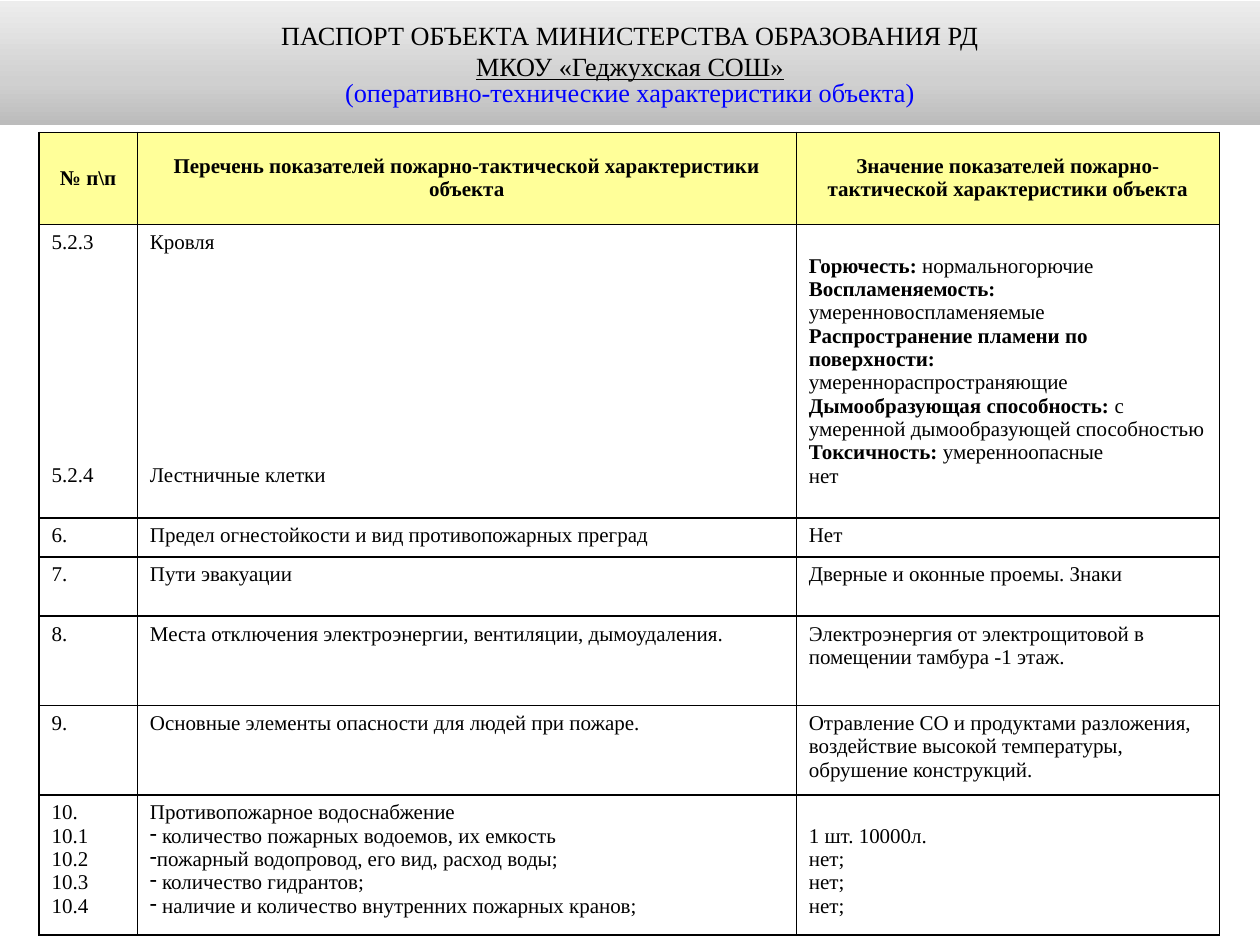
import copy
import lxml.etree
import pptx
import pptx.util
import pptx.dml.color
import pptx.enum.shapes
import pptx.enum.text
import pptx.oxml.ns

HUES = {"ink": "000000", "blue": "0000FF", "head": "FFFF99", "cell": "FFFFFF"}
FADE = [(0, "BCBCBC"), (0.35, "D0D0D0"), (1, "EDEDED")]
FONT = "Times New Roman"
WIDE, HIGH = 10, 7.5
COLS = [0.78, 5.23, 3.36]
ROWS = [0.73, 2.33, 0.31, 0.47, 0.71, 0.71, 1.11]
LINE = 13.33
MID = pptx.enum.text.MSO_ANCHOR.MIDDLE
MARK = "- "

TITLE = [
    "ПАСПОРТ ОБЪЕКТА МИНИСТЕРСТВА ОБРАЗОВАНИЯ РД",
    "МКОУ «Геджухская СОШ»",
    "(оперативно-технические характеристики объекта)",
]
HEAD = [
    "№ п\\п",
    "Перечень показателей пожарно-тактической характеристики объекта",
    "Значение показателей пожарно-тактической характеристики объекта",
]
ROOF = [
    ("Горючесть:", " нормальногорючие"),
    ("Воспламеняемость: ", "умеренновоспламеняемые"),
    ("Распространение пламени по поверхности:", ""),
    ("", "умереннораспространяющие"),
    ("Дымообразующая способность: ", "с умеренной дымообразующей способностью"),
    ("Токсичность:", " умеренноопасные"),
    ("", "нет"),
]
BODY = [
    ["5.2.3\n5.2.4", "Кровля\nЛестничные клетки", ROOF],
    ["6.", "Предел огнестойкости и вид противопожарных преград", "Нет"],
    ["7.", "Пути эвакуации", "Дверные и оконные проемы. Знаки"],
    ["8.", "Места отключения электроэнергии, вентиляции, дымоудаления.",
     "Электроэнергия от электрощитовой в помещении тамбура -1 этаж."],
    ["9.", "Основные элементы опасности для людей при пожаре.",
     "Отравление СО и продуктами разложения, воздействие высокой "
     "температуры, обрушение конструкций."],
    ["10.\n10.1\n10.2\n10.3\n10.4",
     "Противопожарное водоснабжение\n количество пожарных водоемов, их емкость\n"
     "пожарный водопровод, его вид, расход воды;\n количество гидрантов;\n"
     " наличие и количество внутренних пожарных кранов;",
     "1 шт. 10000л.\nнет;\nнет;\nнет;"],
]


def tint(name):
    return pptx.dml.color.RGBColor.from_string(HUES.get(name, name))


def style(run, size, hue="ink", bold=False):
    run.font.name = FONT
    run.font.size = pptx.util.Pt(size)
    run.font.bold = bold
    run.font.color.rgb = tint(hue)


def center(para):
    para.alignment = pptx.enum.text.PP_ALIGN.CENTER


def fade(shape):
    fill = shape.fill
    fill.gradient()
    fill.gradient_angle = 90
    first = shape.element.find(".//" + pptx.oxml.ns.qn("a:gs"))
    first.addnext(copy.deepcopy(first))
    for stop, (place, hue) in zip(fill.gradient_stops, FADE):
        stop.position = place
        stop.color.rgb = tint(hue)


def banner(slide):
    inch = pptx.util.Inches
    shape = slide.shapes.add_shape(
        pptx.enum.shapes.MSO_SHAPE.RECTANGLE, 0, inch(0.01), inch(WIDE), inch(0.98))
    shape.shadow.inherit = False
    shape.line.fill.background()
    fade(shape)
    frame = shape.text_frame
    frame.word_wrap = True
    frame.vertical_anchor = MID
    frame.text = "\n".join(TITLE)
    for para in frame.paragraphs:
        center(para)
        style(para.runs[0], 15)
    name, note = frame.paragraphs[1:]
    name.runs[0].font.underline = True
    note.line_spacing = 0.8
    note.runs[0].font.color.rgb = tint("blue")


def edge(cell):
    props = cell._tc.get_or_add_tcPr()
    qn = pptx.oxml.ns.qn
    for spot, side in enumerate(("a:lnL", "a:lnR", "a:lnT", "a:lnB")):
        line = lxml.etree.Element(qn(side), w=str(pptx.util.Pt(1)))
        fill = lxml.etree.SubElement(line, qn("a:solidFill"))
        lxml.etree.SubElement(fill, qn("a:srgbClr"), val=HUES["ink"])
        props.insert(spot, line)


def bullet(para):
    props = para._p.get_or_add_pPr()
    props.set("marL", "0")
    props.set("indent", "0")
    lxml.etree.SubElement(props, pptx.oxml.ns.qn("a:buChar"), char=MARK.strip())


def write(cell, text, head):
    frame = cell.text_frame
    if isinstance(text, str):
        frame.text = text
        for para in frame.paragraphs:
            style(para.runs[0], 12, bold=head)
            if head:
                center(para)
    else:
        cell.vertical_anchor = MID
        frame.text = "\n" * (len(text) - 1)
        for para, parts in zip(frame.paragraphs, text):
            for part, bold in zip(parts, (True, False)):
                if part:
                    run = para.add_run()
                    run.text = part
                    style(run, 12, bold=bold)


def grid(slide):
    inch = pptx.util.Inches
    frame = slide.shapes.add_table(
        len(ROWS), len(COLS), inch(0.31), inch(1.05), inch(sum(COLS)), inch(sum(ROWS)))
    table = frame.table
    for col, wide in zip(table.columns, COLS):
        col.width = inch(wide)
    for row, high in zip(table.rows, ROWS):
        row.height = inch(high)
    for r, texts in enumerate([HEAD] + BODY):
        for c, text in enumerate(texts):
            cell = table.cell(r, c)
            cell.fill.solid()
            cell.fill.fore_color.rgb = tint("cell" if r else "head")
            edge(cell)
            if r == 0:
                cell.vertical_anchor = MID
            write(cell, text, r == 0)
    for c in range(2):
        last = table.cell(1, c).text_frame.paragraphs[1]
        last.space_before = pptx.util.Pt(9 * LINE)
    for para in table.cell(6, 1).text_frame.paragraphs[1:]:
        bullet(para)
    table.cell(6, 2).margin_top = inch(0.05) + pptx.util.Pt(LINE)


def main():
    deck = pptx.Presentation()
    deck.slide_width = pptx.util.Inches(WIDE)
    deck.slide_height = pptx.util.Inches(HIGH)
    slide = deck.slides.add_slide(deck.slide_layouts[6])
    grid(slide)
    banner(slide)
    deck.save("out.pptx")


if __name__ == "__main__":
    main()
